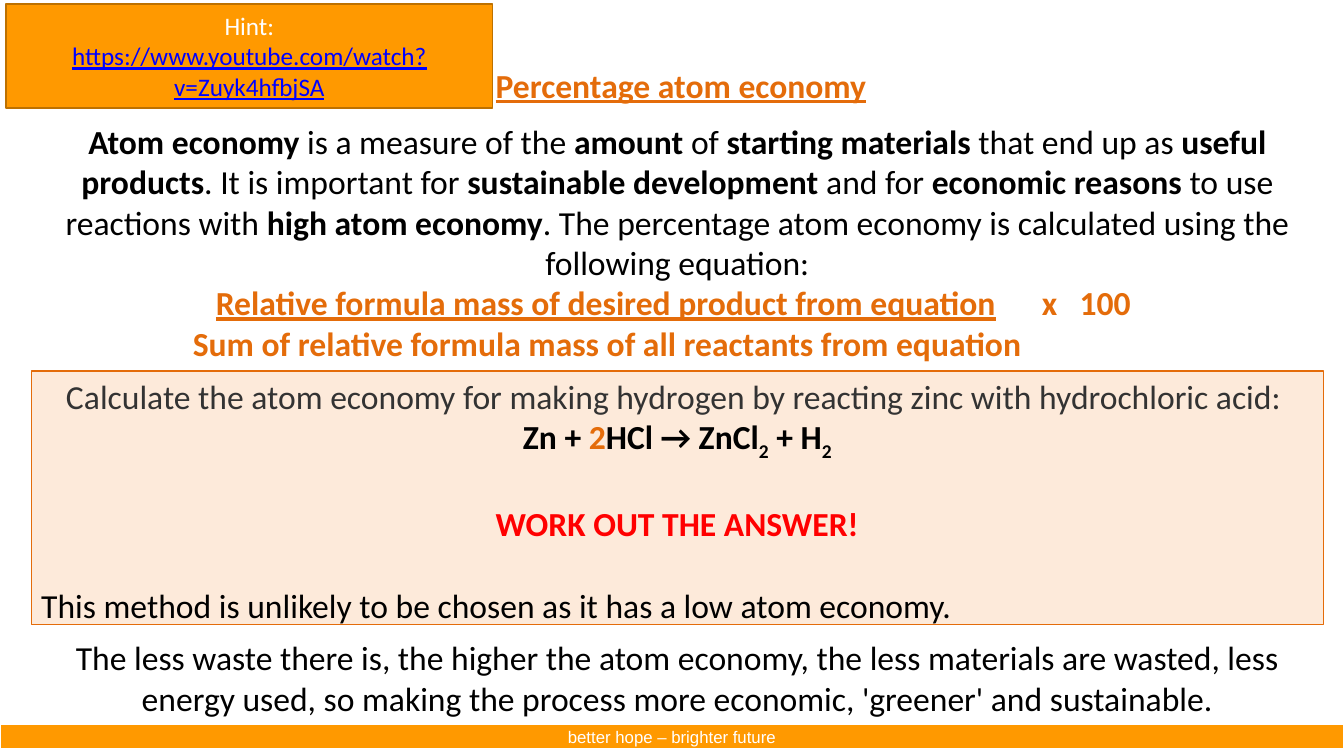
import pptx
import pptx.dml.color
import pptx.enum.shapes
import pptx.enum.text
import pptx.util
from lxml import etree

Cm, Pt = pptx.util.Cm, pptx.util.Pt
ALIGN = pptx.enum.text.PP_ALIGN
ANCHOR = pptx.enum.text.MSO_ANCHOR
NS = "{http://schemas.openxmlformats.org/drawingml/2006/main}"

WHITE, BLACK, GREY, RED, BLUE = "FFFFFF", "000000", "333333", "FF0000", "0000FF"
AMBER, BROWN, ORANGE, PEACH = "FF9900", "BD7100", "E46C0A", "FDEADA"
BOLD, UNDERLINE, SUB = {"bold": True}, {"underline": True}, {"sub": True}
FORMULA_TABS = [3.82, 4.4, 24.63, 25.22, 26.17]  # cm from the text edge
BLANK_LINE = 29.3  # pt, one line of 24 pt text

# A paragraph: runs of (text, run style), then the style all its runs share
FOOTER = [([("better hope – brighter future", {})],
           dict(size=12, name="Arial", color=WHITE))]
TITLE = [([("Percentage atom economy", {})],
          dict(color=ORANGE, bold=True, underline=True))]
DEFINITION = [
    ([("Atom economy ", BOLD), ("is a measure of the ", {}), ("amount ", BOLD),
      ("of ", {}), ("starting materials ", BOLD), ("that end up as ", {}),
      ("useful products", BOLD), (". It is important for ", {}),
      ("sustainable development ", BOLD), ("and for ", {}),
      ("economic reasons ", BOLD), ("to use reactions with ", {}),
      ("high atom economy", BOLD),
      (". The percentage atom economy is calculated using the following equation:", {})],
     {}),
    ([("\t", {}),
      ("\tRelative formula mass of desired product from equation\t", UNDERLINE),
      ("\tx\t100", {})],
     dict(color=ORANGE, bold=True, align=ALIGN.LEFT, tabs=FORMULA_TABS)),
    ([("\tSum of relative formula mass of all reactants from equation", {})],
     dict(color=ORANGE, bold=True, align=ALIGN.LEFT, tabs=FORMULA_TABS[:1])),
]
EXERCISE = [
    ([("Calculate the atom economy for making hydrogen by reacting zinc "
       "with hydrochloric acid: ", {})], dict(color=GREY)),
    ([("Zn + ", {}), ("2", {"color": ORANGE}), ("HCl → ZnCl", {}), ("2", SUB),
      (" + H", {}), ("2", SUB)], dict(bold=True)),
    ([("WORK OUT THE ANSWER!", {})], dict(color=RED, bold=True, before=BLANK_LINE)),
    ([("This method is unlikely to be chosen as it has a low atom economy.", {})],
     dict(align=ALIGN.LEFT, before=BLANK_LINE)),
]
CONCLUSION = [([("The less waste there is, the higher the atom economy, the less materials "
                 "are wasted, less energy used, so making the process more economic, "
                 "'greener' and sustainable.", {})], {})]
HINT = [
    ([("Hint:", {})], dict(size=18, color=WHITE)),
    ([("https://www.youtube.com/watch?v=Zuyk4hfbjSA", {})],
     dict(size=18, color=BLUE, underline=True)),
]

# left, top, width, height in cm; fill; line colour; line width; anchor; text
LEFT, WIDTH = 0.79, 32.56
BOXES = [
    ((0, 18.24, 33.87, 0.63), AMBER, WHITE, 1.5, ANCHOR.MIDDLE, FOOTER),
    ((0.46, 1.5, 33.4, 8.46), None, None, 0, ANCHOR.TOP, TITLE),
    ((LEFT, 2.92, WIDTH, 6.4), None, WHITE, 0.75, ANCHOR.TOP, DEFINITION),
    ((LEFT, 9.35, WIDTH, 6.4), PEACH, ORANGE, 0.75, ANCHOR.TOP, EXERCISE),
    ((LEFT, 15.93, WIDTH, 2.31), None, None, 0, ANCHOR.TOP, CONCLUSION),
    ((0.15, 0.1, 12.27, 2.62), AMBER, BROWN, 1, ANCHOR.MIDDLE, HINT),
]


def rgb(value):
    return pptx.dml.color.RGBColor.from_string(value)


def style_font(font, style):
    for key in ("name", "bold", "underline"):
        if key in style:
            setattr(font, key, style[key])
    if "size" in style:
        font.size = Pt(style["size"])
    if "color" in style:
        font.color.rgb = rgb(style["color"])


def add_tabs(p, stops):
    tab_list = etree.SubElement(p._p.get_or_add_pPr(), NS + "tabLst")
    for stop in stops:
        etree.SubElement(tab_list, NS + "tab", pos=str(int(Cm(stop))), algn="l")


def write(tf, paragraphs):
    for i, (runs, style) in enumerate(paragraphs):
        style = {"size": 24, "name": "Calibri", "color": BLACK, **style}
        p = tf.paragraphs[0] if i == 0 else tf.add_paragraph()
        p.alignment = style.get("align", ALIGN.CENTER)
        if "before" in style:
            p.space_before = Pt(style["before"])
        if "tabs" in style:
            add_tabs(p, style["tabs"])
        style_font(p.font, style)
        for text, run_style in runs:
            r = p.add_run()
            r.text = text
            style_font(r.font, run_style)
            if "sub" in run_style:
                r.font._element.set("baseline", "-25000")


def add_box(s, place, fill, line, line_width, anchor, paragraphs):
    place = [Cm(v) for v in place]
    if fill or line:
        sp = s.shapes.add_shape(pptx.enum.shapes.MSO_SHAPE.RECTANGLE, *place)
        sp.shadow.inherit = False
        if fill:
            sp.fill.solid()
            sp.fill.fore_color.rgb = rgb(fill)
        else:
            sp.fill.background()
        sp.line.color.rgb = rgb(line)
        sp.line.width = Pt(line_width)
    else:
        sp = s.shapes.add_textbox(*place)
    tf = sp.text_frame
    tf.word_wrap = True
    tf.vertical_anchor = anchor
    write(tf, paragraphs)


def main():
    prs = pptx.Presentation()
    prs.slide_width, prs.slide_height = Cm(33.87), Cm(19.05)
    s = prs.slides.add_slide(prs.slide_layouts[6])
    for box in BOXES:
        add_box(s, *box)
    prs.save("out.pptx")


if __name__ == "__main__":
    main()
